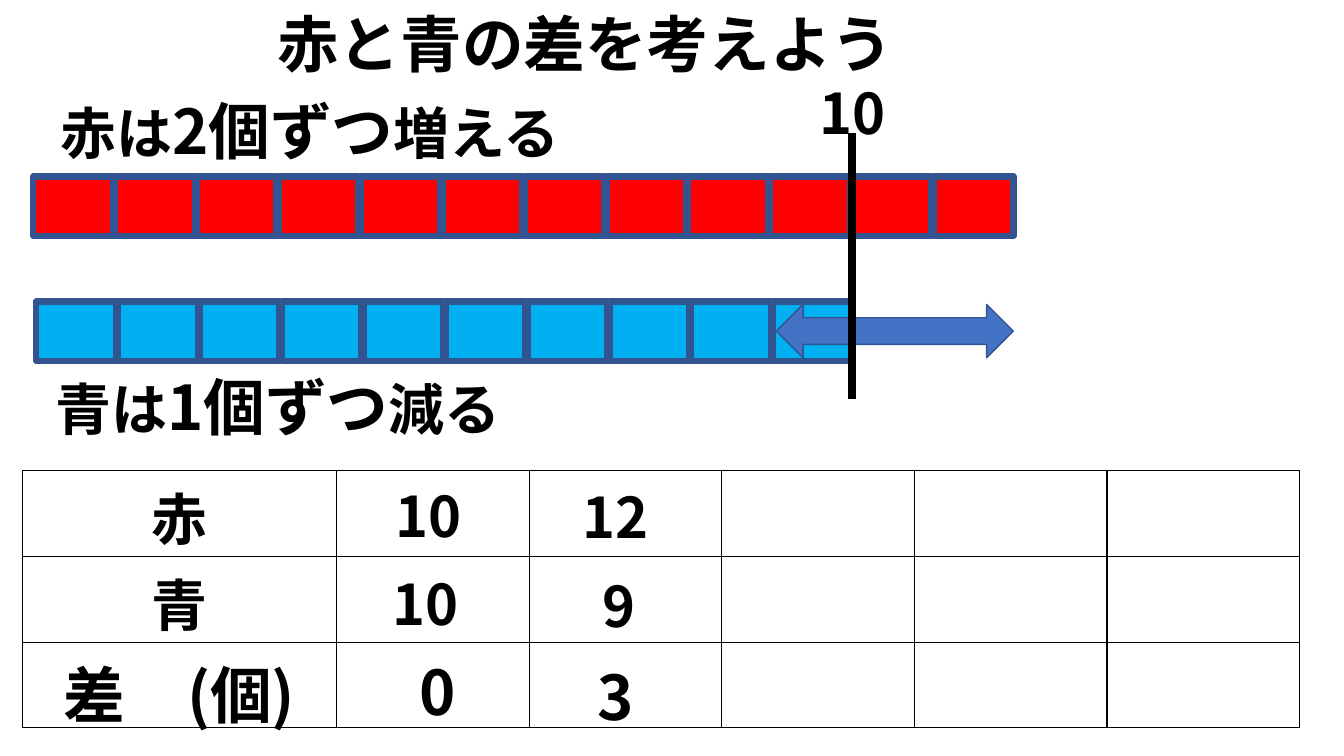
from dataclasses import dataclass

from lxml.etree import SubElement
from pptx import Presentation
from pptx.dml.color import RGBColor
from pptx.enum.shapes import MSO_CONNECTOR as CONN, MSO_SHAPE as SHAPE
from pptx.enum.text import MSO_ANCHOR as ANCHOR, MSO_AUTO_SIZE as AUTO, PP_ALIGN as ALIGN
from pptx.oxml import parse_xml
from pptx.oxml.ns import nsdecls, qn
from pptx.util import Inches, Pt


@dataclass(frozen=True)
class Theme:
    font: str = "Noto Sans CJK JP"
    ink: str = "000000"
    red: str = "FF0000"
    blue: str = "00B0F0"
    arrow: str = "4472C4"
    edge: str = "325491"
    big: int = 44
    mid: int = 40


T = Theme()

# Content: runs are (text, size)
TITLE = [("赤と青の差を考えよう", T.big)]
CAPTIONS = [
    (0.5, 0.87, [("赤は", T.mid), ("2個ずつ", T.big), ("増える", T.mid)]),
    (0.45, 3.61, [("青は", T.mid), ("1個ずつ", T.big), ("減る", T.mid)]),
]
BARS = [  # left, top, count, colour
    (0.33, 1.75, 12, T.red),
    (0.36, 2.99, 10, T.blue),
]
ROW_HEADS = [("赤", T.mid), ("青", T.mid), ("差　(個)", T.big)]
NUMBERS = [  # left, top, width, text, size
    (3.82, 4.73, 1.14, "10", T.mid),
    (3.79, 5.6, 1.14, "10", T.mid),
    (5.68, 4.74, 0.87, "12", T.mid),
    (5.88, 5.62, 0.59, "9", T.mid),
    (4.06, 6.44, 0.87, "0", T.big),
    (5.83, 6.49, 0.87, "3", T.big),
    (8.03, 0.73, 1.14, "10", T.mid),
]

# Grid
PITCH, BLOCK_W, BLOCK_H = 0.812, 0.79, 0.59
COLS, ROWS = [3.12] + [1.91] * 5, [0.85] * 3
TABLE_X, TABLE_Y = 0.22, 4.67
TEN_X = 8.45

prs = Presentation()
prs.slide_width, prs.slide_height = Inches(13.33), Inches(7.5)
slide = prs.slides.add_slide(prs.slide_layouts[5])
shapes = slide.shapes


def rgb(value):
    return RGBColor.from_string(value)


def write(tf, runs, align=ALIGN.LEFT, anchor=ANCHOR.TOP, grow=True):
    tf.word_wrap = True
    tf.vertical_anchor = anchor
    if grow:
        tf.auto_size = AUTO.SHAPE_TO_FIT_TEXT
    p = tf.paragraphs[0]
    p.alignment = align
    for text, size in runs:
        r = p.add_run()
        r.text = text
        r.font.name, r.font.size, r.font.bold = T.font, Pt(size), True
        r.font.color.rgb = rgb(T.ink)
        SubElement(r.font._element, qn("a:ea"), typeface=T.font)


def add_text(x, y, w, runs):
    height = 0.84 if max(size for _, size in runs) == T.big else 0.77
    box = shapes.add_textbox(Inches(x), Inches(y), Inches(w), Inches(height))
    write(box.text_frame, runs)


def add_block(kind, x, y, w, h, fill, line_width):
    sp = shapes.add_shape(kind, Inches(x), Inches(y), Inches(w), Inches(h))
    sp.shadow.inherit = False
    sp.fill.solid()
    sp.fill.fore_color.rgb = rgb(fill)
    sp.line.color.rgb = rgb(T.edge)
    sp.line.width = Pt(line_width)


def outline_cell(cell):
    tc_pr = cell._tc.get_or_add_tcPr()
    for i, side in enumerate(("lnL", "lnR", "lnT", "lnB")):
        tc_pr.insert(i, parse_xml(
            f'<a:{side} {nsdecls("a")} w="12700"><a:solidFill>'
            f'<a:srgbClr val="{T.ink}"/></a:solidFill></a:{side}>'))


# Title
title = shapes.title
title.left, title.top = Inches(2.65), Inches(0.01)
title.width, title.height = Inches(8.67), Inches(0.84)
write(title.text_frame, TITLE)

# Bars of blocks
for left, top, count, colour in BARS:
    for i in range(count):
        add_block(SHAPE.RECTANGLE, left + i * PITCH, top, BLOCK_W, BLOCK_H, colour, 4.5)

# Table
table = shapes.add_table(len(ROWS), len(COLS), Inches(TABLE_X), Inches(TABLE_Y),
                         Inches(sum(COLS)), Inches(sum(ROWS))).table
table.first_row = table.horz_banding = False
for column, width in zip(table.columns, COLS):
    column.width = Inches(width)
for row, height in zip(table.rows, ROWS):
    row.height = Inches(height)
for cell in table.iter_cells():
    cell.fill.background()
    outline_cell(cell)
for i, head in enumerate(ROW_HEADS):
    cell = table.cell(i, 0)
    cell.vertical_anchor = ANCHOR.MIDDLE
    write(cell.text_frame, [head], align=ALIGN.CENTER, anchor=None, grow=False)

# Difference arrow, numbers and the line at ten
add_block(SHAPE.LEFT_RIGHT_ARROW, 7.7, 3.02, 2.35, 0.53, T.arrow, 1)
for x, y, w, text, size in NUMBERS:
    add_text(x, y, w, [(text, size)])
ten = shapes.add_connector(CONN.STRAIGHT, Inches(TEN_X), Inches(1.32),
                           Inches(TEN_X), Inches(3.96))
ten.line.color.rgb = rgb(T.ink)
ten.line.width = Pt(6)
SubElement(ten._element.spPr, qn("a:effectLst"))

# Captions
for x, y, runs in CAPTIONS:
    add_text(x, y, 5.97, runs)

prs.save("out.pptx")
